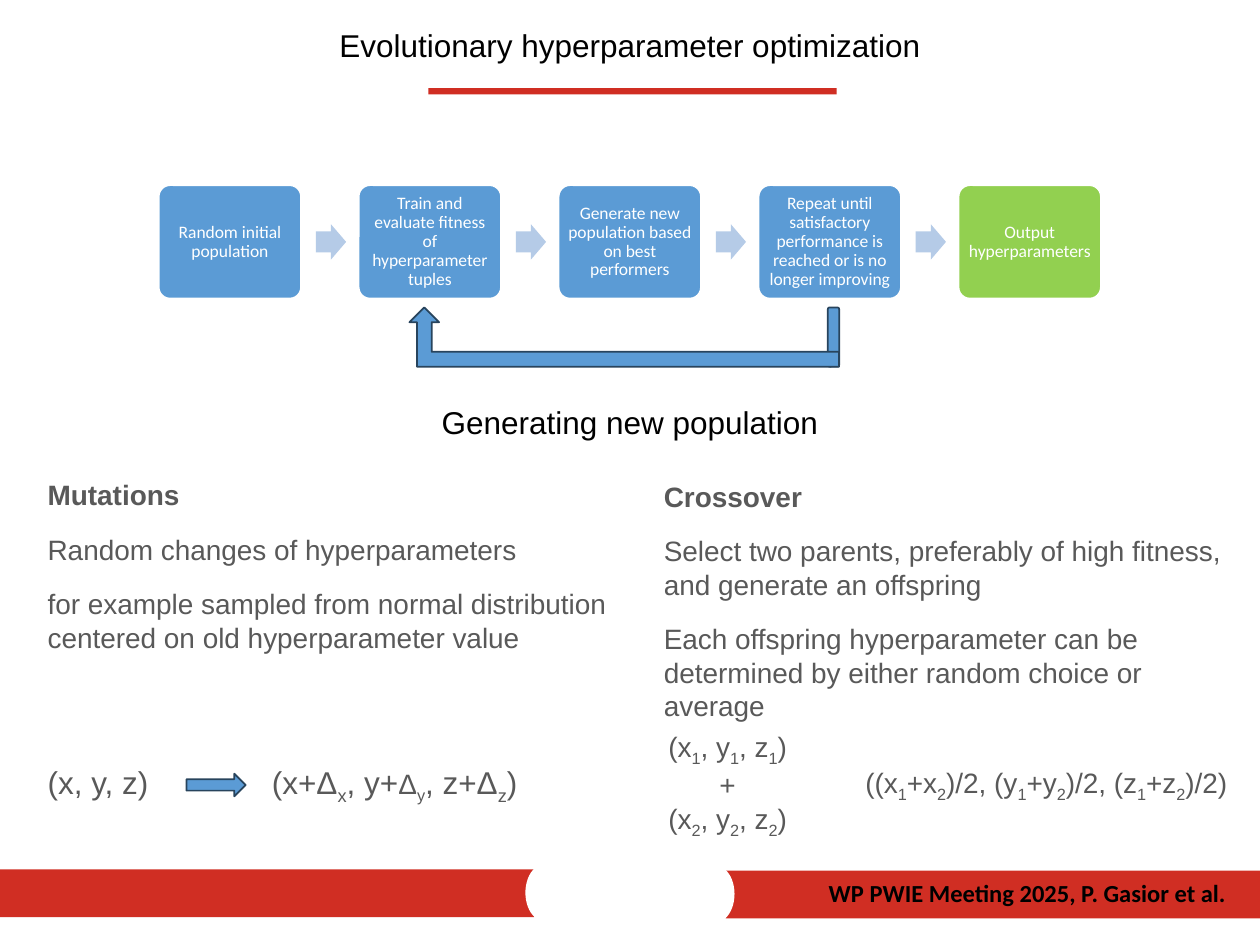
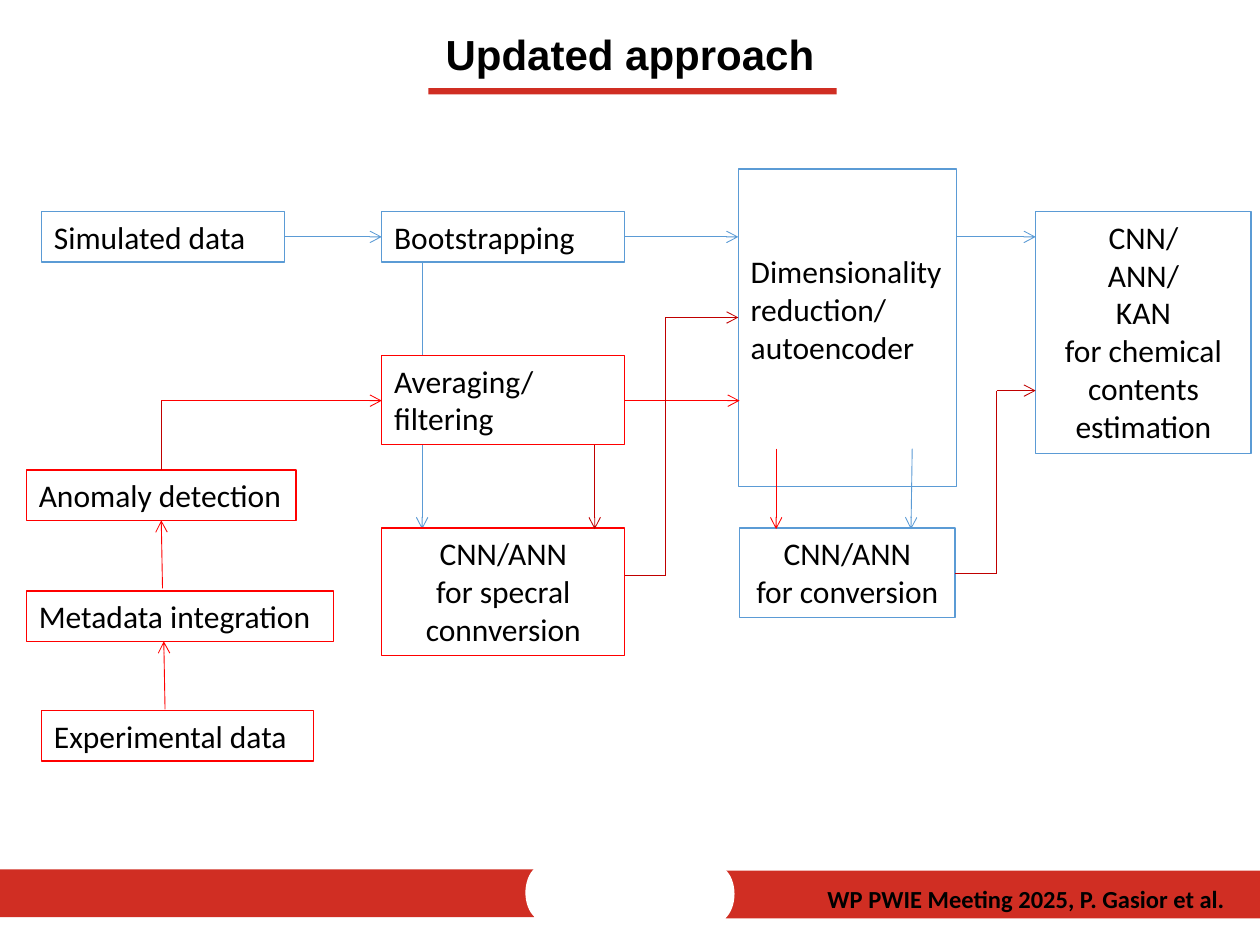
from dataclasses import dataclass
from itertools import pairwise

from lxml.etree import SubElement
from pptx import Presentation
from pptx.dml.color import RGBColor
from pptx.enum.shapes import MSO_CONNECTOR as Connector, MSO_SHAPE as Preset
from pptx.enum.text import MSO_ANCHOR as Anchor, PP_ALIGN as Align
from pptx.oxml.ns import qn
from pptx.util import Pt

BLACK = RGBColor(0x00, 0x00, 0x00)
WHITE = RGBColor(0xFF, 0xFF, 0xFF)
GREY = RGBColor(0x59, 0x59, 0x59)
BAND_RED = RGBColor(0xD0, 0x2E, 0x23)
BLUE = RGBColor(0x5B, 0x9B, 0xD5)
NAVY = RGBColor(0x28, 0x44, 0x5D)
PALE_BLUE = RGBColor(0xB5, 0xCB, 0xE7)
GREEN = RGBColor(0x92, 0xD0, 0x50)
RED = RGBColor(0xFF, 0x00, 0x00)
DARK_RED = RGBColor(0xC0, 0x00, 0x00)

FOOTER = "WP PWIE Meeting 2025, P. Gasior et al."


@dataclass(frozen=True)
class Area:
    left: float
    top: float
    width: float
    height: float

    def lengths(self) -> tuple:
        return Pt(self.left), Pt(self.top), Pt(self.width), Pt(self.height)


@dataclass(frozen=True)
class Style:
    name: str
    size: float
    color: RGBColor = BLACK
    bold: bool = False


@dataclass(frozen=True)
class Node:
    area: Area
    texts: tuple[str, ...]
    line: RGBColor
    fill: RGBColor | None = None
    align: Align = Align.LEFT
    top_inset: float = 3.6


@dataclass(frozen=True)
class Route:
    color: RGBColor
    points: tuple[tuple[float, float], ...]
    arrow: bool = True


HEADING = Style("Arial", 18)
BOLD_HEADING = Style("Arial", 24, bold=True)
FOOTER_STYLE = Style("Calibri", 14, bold=True)
STEP_STYLE = Style("Calibri", 10, WHITE)
NODE_STYLE = Style("Calibri", 18)
BODY = Style("Arial", 16, GREY)
BODY_BOLD = Style("Arial", 16, GREY, True)
FORMULA = Style("Arial", 18, GREY)

STEPS = (
    ("Random initial population", BLUE),
    ("Train and evaluate fitness of hyperparameter tuples", BLUE),
    ("Generate new population based on best performers", BLUE),
    ("Repeat until satisfactory performance is reached or is no longer improving", BLUE),
    ("Output hyperparameters", GREEN),
)
STEP_LEFT, STEP_PITCH = 90.72, 114.26

METHODS = (
    (Area(20.16, 269.28, 360, 108.72), (
        "Mutations",
        "Random changes of hyperparameters",
        "for example sampled from normal distribution centered on old hyperparameter value",
    )),
    (Area(372.24, 270.2, 334.8, 147.6), (
        "Crossover",
        "Select two parents, preferably of high fitness, and generate an offspring",
        "Each offspring hyperparameter can be determined by either random choice or average",
    )),
)

BEHIND_NODES = Route(BLUE, ((241.2, 149.76), (241.2, 302.4)))
NODES = (
    Node(Area(23.76, 120.96, 138.96, 28.8), ("Simulated data",), BLUE),
    Node(Area(218.16, 203.04, 138.96, 51.12), ("Averaging/", "filtering"), RED, WHITE),
    Node(Area(218.16, 120.96, 138.96, 28.8), ("Bootstrapping",), BLUE),
    Node(Area(15.12, 268.56, 154.08, 28.8), ("Anomaly detection",), RED),
    Node(Area(23.76, 406.08, 155.52, 28.8), ("Experimental data",), RED),
    Node(Area(15.12, 337.68, 175.68, 28.8), ("Metadata integration",), RED),
    Node(Area(421.92, 96.48, 124.56, 181.44), ("Dimensionality reduction/\nautoencoder",),
         BLUE, top_inset=47.5),
    Node(Area(422.64, 301.68, 123.12, 51.12), ("CNN/ANN\nfor conversion",), BLUE,
         align=Align.CENTER),
    Node(Area(591.84, 120.96, 123.12, 138.24),
         ("CNN/", "ANN/", "KAN\nfor chemical contents estimation"), BLUE, align=Align.CENTER),
    Node(Area(218.16, 301.68, 138.96, 72.72), ("CNN/ANN\nfor specral connversion",),
         RED, WHITE, Align.CENTER),
)
ROUTES = (
    Route(RED, ((94.32, 405.36), (93.6, 366.48))),
    Route(RED, ((92.88, 336.24), (92.16, 297.36))),
    Route(DARK_RED, ((92.16, 268.56), (92.16, 228.96)), False),
    Route(RED, ((92.16, 228.96), (218.16, 228.96))),
    Route(BLUE, ((162.72, 135.36), (218.16, 135.36))),
    Route(BLUE, ((357.12, 135.36), (421.92, 135.36))),
    Route(RED, ((357.12, 228.96), (422.64, 228.96))),
    Route(BLUE, ((546.48, 135.36), (591.84, 135.36))),
    Route(RED, ((443.52, 256.32), (443.52, 302.4))),
    Route(BLUE, ((521.28, 256.32), (520.56, 302.4))),
    Route(DARK_RED, ((339.84, 254.16), (339.84, 302.4))),
    Route(DARK_RED, ((545.76, 327.6), (569.52, 327.6), (569.52, 223.2), (591.84, 223.2))),
    Route(DARK_RED, ((357.12, 329.04), (380.16, 329.04), (380.16, 181.44), (421.92, 181.44))),
)


def add_span(para, text: str, style: Style, subscript: bool = False) -> None:
    span = para.add_run()
    span.text = text
    font = span.font
    font.name, font.size, font.bold = style.name, Pt(style.size), style.bold
    font.color.rgb = style.color
    if subscript:
        font._element.set("baseline", "-25000")


def add_spans(para, text: str, style: Style) -> None:
    for index, line in enumerate(text.split("\n")):
        if index:
            para.add_line_break()
        add_span(para, line, style)


def add_formula(para, text: str, style: Style) -> None:
    first, *rest = text.split("_")
    if first:
        add_span(para, first, style)
    for part in rest:
        add_span(para, part[0], style, True)
        if part[1:]:
            add_span(para, part[1:], style)


def add_paras(frame, count: int, align: Align) -> list:
    frame.word_wrap = True
    paras = [frame.paragraphs[0]] + [frame.add_paragraph() for _ in range(count - 1)]
    for para in paras:
        para.alignment = align
    return paras


def add_box(page, area: Area, count: int = 1, align: Align = Align.LEFT) -> list:
    frame = page.shapes.add_textbox(*area.lengths()).text_frame
    return add_paras(frame, count, align)


def draw_shape(page, preset: Preset, area: Area, fill: RGBColor | None,
               line: RGBColor | None = None, weight: float = 1):
    shape = page.shapes.add_shape(preset, *area.lengths())
    shape.shadow.inherit = False
    if fill is None:
        shape.fill.background()
    else:
        shape.fill.solid()
        shape.fill.fore_color.rgb = fill
    if line is None:
        shape.line.fill.background()
    else:
        shape.line.color.rgb = line
        shape.line.width = Pt(weight)
    return shape


def draw_frame(page, footer_area: Area) -> None:
    draw_shape(page, Preset.RECTANGLE, Area(244.8, 50.4, 233.28, 3.6), BAND_RED)
    for band_left, band_top, cap_left in ((414.72, 497.52, 398.16), (0, 496.8, 300.24)):
        draw_shape(page, Preset.RECTANGLE, Area(band_left, band_top, 305.28, 27.36), BAND_RED)
        draw_shape(page, Preset.OVAL, Area(cap_left, band_top - 2.88, 21.6, 32.4), WHITE)
    add_span(add_box(page, footer_area, align=Align.RIGHT)[0], FOOTER, FOOTER_STYLE)


def draw_steps(page) -> None:
    for index, (text, fill) in enumerate(STEPS):
        left = STEP_LEFT + index * STEP_PITCH
        step = draw_shape(page, Preset.ROUNDED_RECTANGLE, Area(left, 105.84, 81.36, 64.8),
                          fill, WHITE)
        step.adjustments[0] = 0.1
        frame = step.text_frame
        frame.margin_left = frame.margin_right = Pt(2.88)
        frame.margin_top = frame.margin_bottom = Pt(2.88)
        frame.vertical_anchor = Anchor.MIDDLE
        para = add_paras(frame, 1, Align.CENTER)[0]
        para.line_spacing = 0.9
        add_span(para, text, STEP_STYLE)
        if index < len(STEPS) - 1:
            arrow = draw_shape(page, Preset.RIGHT_ARROW,
                               Area(left + 89.8, 128.16, 17.28, 20.16), PALE_BLUE)
            arrow.adjustments[0] = 0.6
    draw_shape(page, Preset.ROUNDED_RECTANGLE, Area(473.04, 175.68, 6.48, 33.84), BLUE, NAVY)
    loop = draw_shape(page, Preset.BENT_UP_ARROW, Area(234, 175.68, 245.52, 33.84), BLUE, NAVY)
    loop._element.spPr.find(qn("a:xfrm")).set("flipH", "1")


def draw_method(page, area: Area, texts: tuple[str, ...]) -> None:
    for index, (para, text) in enumerate(zip(add_box(page, area, len(texts)), texts)):
        para.space_after = Pt(12)
        add_span(para, text, BODY if index else BODY_BOLD)


def draw_formulas(page) -> None:
    add_formula(add_box(page, Area(20.16, 432.72, 86.4, 28.8))[0], "(x, y, z)", FORMULA)
    mutated = add_box(page, Area(148.32, 432.72, 166.32, 28.8))[0]
    for text, style in (("(x+Δ_x, y+", FORMULA), ("Δ_y", BODY), (", z+Δ_z)", FORMULA)):
        add_formula(mutated, text, style)
    draw_shape(page, Preset.RIGHT_ARROW, Area(106.56, 442.08, 33.84, 12.96), BLUE, NAVY)
    parents = ("(x_1, y_1, z_1)", "+", "(x_2, y_2, z_2)")
    paras = add_box(page, Area(360, 413.28, 111.6, 65.52), len(parents), Align.CENTER)
    for para, text in zip(paras, parents):
        add_formula(para, text, BODY)
    offspring = add_box(page, Area(487.44, 434.16, 232.56, 26.64))[0]
    add_formula(offspring, "((x_1+x_2)/2, (y_1+y_2)/2, (z_1+z_2)/2)", BODY)


def draw_node(page, node: Node) -> None:
    shape = draw_shape(page, Preset.RECTANGLE, node.area, node.fill, node.line, 0.75)
    frame = shape.text_frame
    frame.vertical_anchor = Anchor.TOP
    frame.margin_top = Pt(node.top_inset)
    for para, text in zip(add_paras(frame, len(node.texts), node.align), node.texts):
        add_spans(para, text, NODE_STYLE)


def draw_route(page, route: Route) -> None:
    for start, end in pairwise(route.points):
        line = page.shapes.add_connector(Connector.STRAIGHT, *map(Pt, start + end))
        line.line.color.rgb = route.color
        line.line.width = Pt(0.5)
        if route.arrow and end == route.points[-1]:
            SubElement(line.line._get_or_add_ln(), qn("a:tailEnd"), type="arrow")
        SubElement(line._element.spPr, qn("a:effectLst"))


def build_optimization(page) -> None:
    draw_frame(page, Area(432, 498.24, 275.76, 24.48))
    for area, text in (
        (Area(0, 11.52, 720, 28.8), "Evolutionary hyperparameter optimization"),
        (Area(180, 226.8, 360, 28.8), "Generating new population"),
    ):
        add_span(add_box(page, area, align=Align.CENTER)[0], text, HEADING)
    draw_steps(page)
    for area, texts in METHODS:
        draw_method(page, area, texts)
    draw_formulas(page)


def build_approach(page) -> None:
    draw_frame(page, Area(431.28, 501.84, 275.76, 24.48))
    title = page.shapes.add_textbox(*Area(0, 13.68, 720, 30.96).lengths()).text_frame
    title.vertical_anchor = Anchor.MIDDLE
    para = add_paras(title, 1, Align.CENTER)[0]
    para.line_spacing = Pt(32)
    add_span(para, "Updated approach", BOLD_HEADING)
    draw_route(page, BEHIND_NODES)
    for node in NODES:
        draw_node(page, node)
    for route in ROUTES:
        draw_route(page, route)


def main() -> None:
    deck = Presentation()
    deck.slide_width, deck.slide_height = Pt(720), Pt(540)
    for build in (build_optimization, build_approach):
        build(deck.slides.add_slide(deck.slide_layouts[6]))
    deck.save("out.pptx")


if __name__ == "__main__":
    main()
